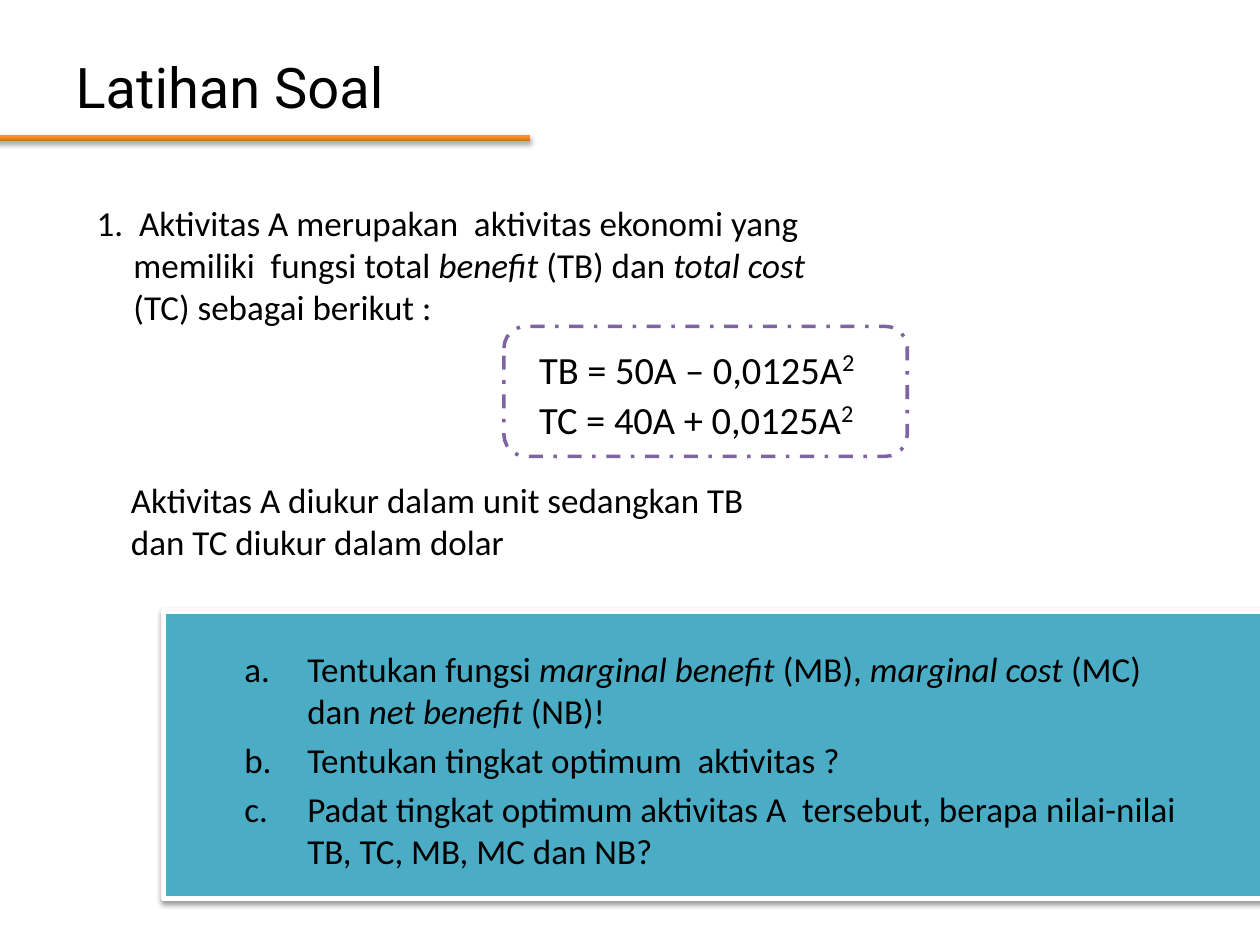
from dataclasses import dataclass

from lxml.etree import SubElement
from pptx import Presentation
from pptx.dml.color import RGBColor
from pptx.enum.dml import MSO_LINE
from pptx.enum.shapes import MSO_SHAPE
from pptx.enum.text import MSO_ANCHOR, MSO_AUTO_SIZE, PP_ALIGN
from pptx.oxml import parse_xml
from pptx.oxml.ns import nsdecls, qn
from pptx.util import Cm, Pt


@dataclass(frozen=True)
class Theme:
    text: str = "000000"
    paper: str = "FFFFFF"
    panel: str = "4BACC6"
    frame: str = "8064A2"
    bar: tuple = ((0, "CC6E20"), (80, "FF9034"), (100, "FF9136"))
    title_font: str = "Roboto"
    body_font: str = "Calibri"
    title_size: int = 32
    body_size: int = 20
    formula_size: int = 22
    power_size: int = 24


@dataclass(frozen=True)
class Box:
    """Left, top, width and height in centimetres."""
    left: float
    top: float
    width: float
    height: float

    def lengths(self) -> list:
        return [Cm(v) for v in (self.left, self.top, self.width, self.height)]


@dataclass(frozen=True)
class Run:
    text: str
    italic: bool = False
    power: bool = False


THEME = Theme()

QUESTION = [[
    Run("1.  Aktivitas A merupakan  aktivitas ekonomi yang memiliki  fungsi total "),
    Run("benefit", italic=True), Run(" (TB) dan "),
    Run("total cost ", italic=True), Run("(TC) sebagai berikut :"),
]]
FORMULAS = [[Run(f), Run("2", power=True)]
            for f in ("TB = 50A – 0,0125A", "TC = 40A + 0,0125A")]
NOTE = [[Run("Aktivitas A diukur dalam unit sedangkan TB dan TC diukur dalam dolar")]]
TASKS = [
    [Run("Tentukan fungsi "), Run("marginal benefit ", italic=True), Run("(MB), "),
     Run("marginal cost ", italic=True), Run("(MC) dan "),
     Run("net benefit ", italic=True), Run("(NB)!")],
    [Run("Tentukan tingkat optimum  aktivitas ?")],
    [Run("Padat tingkat optimum aktivitas A  tersebut, berapa nilai-nilai "
         "TB, TC, MB, MC dan NB?")],
]


def rgb(color: str) -> RGBColor:
    return RGBColor.from_string(color)


def place(sp, box: Box) -> None:
    sp.left, sp.top, sp.width, sp.height = box.lengths()


def add_shadow(sp, alpha: int) -> None:
    sp.shadow.inherit = False
    effects = sp._element.spPr.find(qn("a:effectLst"))
    effects.append(parse_xml(
        f'<a:outerShdw {nsdecls("a")} blurRad="{Pt(3.1)}" dist="{Pt(1.7)}" '
        f'dir="5400000" rotWithShape="0"><a:srgbClr val="000000">'
        f'<a:alpha val="{alpha * 1000}"/></a:srgbClr></a:outerShdw>'))


def add_panel(slide, kind: MSO_SHAPE, box: Box, fill: str, line: str, width: float):
    sp = slide.shapes.add_shape(kind, *box.lengths())
    sp.shadow.inherit = False
    sp.fill.solid()
    sp.fill.fore_color.rgb = rgb(fill)
    sp.line.color.rgb = rgb(line)
    sp.line.width = Pt(width)
    return sp


def add_bar(slide, box: Box) -> None:
    sp = slide.shapes.add_shape(MSO_SHAPE.ROUNDED_RECTANGLE, *box.lengths())
    sp.line.fill.background()
    sp.fill.gradient()
    sp.fill.gradient_angle = 90
    stops = sp._element.spPr.find(qn("a:gradFill")).find(qn("a:gsLst"))
    stops.clear()
    for pos, color in THEME.bar:
        stop = SubElement(stops, qn("a:gs"), pos=str(pos * 1000))
        SubElement(stop, qn("a:srgbClr"), val=color)
    add_shadow(sp, 35)


def write(tf, paragraphs: list, size: int, indent: float = 0, numbered: bool = False) -> None:
    """Fill a text frame; indent is the hanging indent in centimetres."""
    tf.word_wrap = True
    for i, runs in enumerate(paragraphs):
        p = tf.paragraphs[0] if i == 0 else tf.add_paragraph()
        pPr = p._p.get_or_add_pPr()
        pPr.set("marL", str(Cm(indent)))
        pPr.set("indent", str(-Cm(indent)))
        if numbered:
            SubElement(pPr, qn("a:buFont"), typeface="+mj-lt")
            SubElement(pPr, qn("a:buAutoNum"), type="alphaLcPeriod")
        for run in runs:
            r = p.add_run()
            r.text = run.text
            r.font.name = THEME.body_font
            r.font.size = Pt(THEME.power_size if run.power else size)
            r.font.italic = run.italic
            r.font.color.rgb = rgb(THEME.text)
            if run.power:
                r.font._element.set("baseline", "30000")


def add_text(slide, box: Box, paragraphs: list, size: int, indent: float = 0) -> None:
    sp = slide.shapes.add_textbox(*box.lengths())
    write(sp.text_frame, paragraphs, size, indent)


def main() -> None:
    prs = Presentation()
    prs.slide_width, prs.slide_height = Cm(25.4), Cm(19.05)
    slide = prs.slides.add_slide(prs.slide_layouts[1])
    title, body = slide.placeholders

    panel = add_panel(slide, MSO_SHAPE.RECTANGLE, Box(3.3, 12.32, 22.58, 5.79),
                      THEME.panel, THEME.paper, 3)
    add_shadow(panel, 38)
    frame = add_panel(slide, MSO_SHAPE.ROUNDED_RECTANGLE, Box(10.16, 6.58, 8.13, 2.62),
                      THEME.paper, THEME.frame, 2)
    frame.line.dash_style = MSO_LINE.DASH_DOT

    # The placeholders lie in front of the two panels.
    for sp in (title, body):
        slide.shapes._spTree.append(sp._element)

    place(title, Box(1.27, 0.76, 22.86, 1.96))
    tf = title.text_frame
    tf.text = "Latihan Soal"
    tf.vertical_anchor = MSO_ANCHOR.MIDDLE
    tf.auto_size = MSO_AUTO_SIZE.NONE
    p = tf.paragraphs[0]
    p.alignment = PP_ALIGN.LEFT
    font = p.runs[0].font
    font.name, font.size = THEME.title_font, Pt(THEME.title_size)
    font.color.rgb = rgb(THEME.text)

    place(body, Box(4.67, 12.93, 19.43, 5.41))
    body.text_frame.auto_size = MSO_AUTO_SIZE.NONE
    write(body.text_frame, TASKS, THEME.body_size, indent=1.27, numbered=True)

    add_bar(slide, Box(-0.2, 2.72, 10.9, 0.13))
    add_text(slide, Box(1.7, 3.94, 15.39, 2.82), QUESTION, THEME.body_size, 0.74)
    add_text(slide, Box(10.62, 6.78, 7.62, 2.77), FORMULAS, THEME.formula_size, 1)
    add_text(slide, Box(2.39, 9.53, 14, 1.96), NOTE, THEME.body_size)

    prs.save("out.pptx")


if __name__ == "__main__":
    main()
